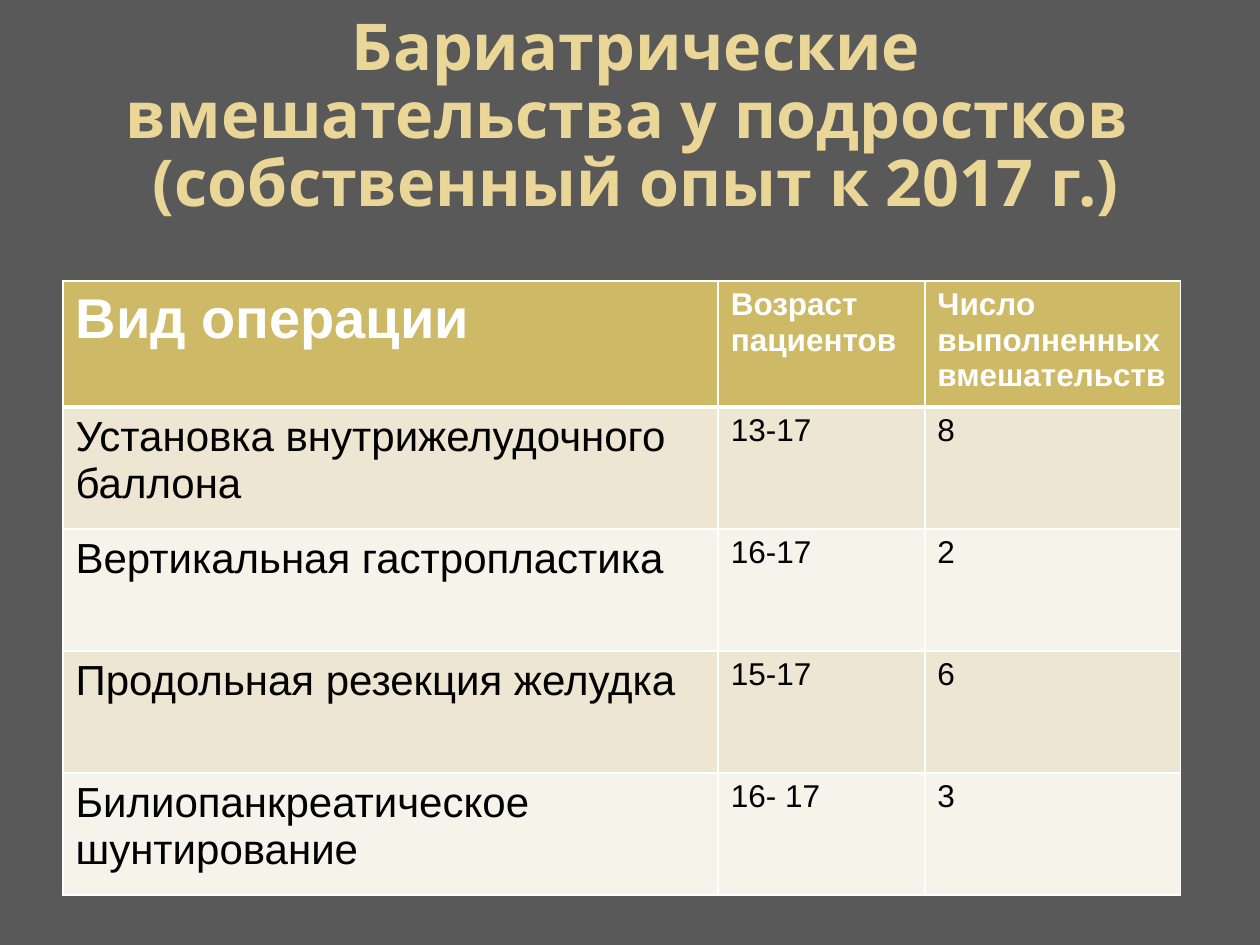
from dataclasses import dataclass

from lxml.etree import SubElement
from pptx import Presentation
from pptx.dml.color import RGBColor
from pptx.enum.text import MSO_ANCHOR as Anchor, PP_ALIGN as Align
from pptx.oxml.ns import qn
from pptx.util import Pt


@dataclass(frozen=True)
class Theme:
    background: str = "595959"
    title: str = "EAD696"
    header: str = "CEB966"
    bands: tuple = ("EDE6D3", "F6F3EA")
    light: str = "FFFFFF"
    dark: str = "000000"
    title_font: str = "Noto Sans"
    body_font: str = "Arial"
    title_size: float = 36.9
    header_size: int = 32
    name_size: int = 24
    value_size: int = 18


def write_text(frame, text, *, font, size, color, bold=False,
               align=Align.LEFT, spacing=None):
    paragraph = frame.paragraphs[0]
    paragraph.text = text
    paragraph.alignment = align
    if spacing:
        paragraph.line_spacing = spacing
    for run in paragraph.runs:
        run.font.name = font
        run.font.size = Pt(size)
        run.font.bold = bold
        run.font.color.rgb = RGBColor.from_string(color)


class SlideBuilder:
    def __init__(self, slide, theme):
        self.slide = slide
        self.theme = theme

    def background(self):
        fill = self.slide.background.fill
        fill.solid()
        fill.fore_color.rgb = RGBColor.from_string(self.theme.background)

    def title(self, text, left, top, width, height):
        box = self.slide.shapes.add_textbox(Pt(left), Pt(top), Pt(width), Pt(height))
        frame = box.text_frame
        frame.word_wrap = True
        frame.vertical_anchor = Anchor.MIDDLE
        write_text(frame, text, font=self.theme.title_font,
                   size=self.theme.title_size, color=self.theme.title,
                   bold=True, align=Align.CENTER, spacing=0.88)

    def border(self, cell, side, width):
        properties = cell._tc.get_or_add_tcPr()
        line = SubElement(properties, qn(f"a:{side}"), w=str(Pt(width)))
        fill = SubElement(line, qn("a:solidFill"))
        SubElement(fill, qn("a:srgbClr"), val=self.theme.light)

    def table(self, rows, left, top, column_widths, row_height):
        theme = self.theme
        table = self.slide.shapes.add_table(
            len(rows), len(column_widths), Pt(left), Pt(top),
            Pt(sum(column_widths)), Pt(row_height * len(rows))).table
        for column, width in zip(table.columns, column_widths):
            column.width = Pt(width)
        for i, values in enumerate(rows):
            table.rows[i].height = Pt(row_height)
            header = i == 0
            for j, value in enumerate(values):
                cell = table.cell(i, j)
                name_size = theme.header_size if header else theme.name_size
                write_text(cell.text_frame, value, font=theme.body_font,
                           size=theme.value_size if j else name_size,
                           color=theme.light if header else theme.dark,
                           bold=header)
                # Borders come before the fill in the cell properties
                for side in ("lnL", "lnR", "lnT", "lnB"):
                    heavy = (i, side) in ((0, "lnB"), (1, "lnT"))
                    self.border(cell, side, 3 if heavy else 1)
                cell.fill.solid()
                color = theme.header if header else theme.bands[(i - 1) % 2]
                cell.fill.fore_color.rgb = RGBColor.from_string(color)


def main():
    presentation = Presentation()
    presentation.slide_width, presentation.slide_height = Pt(720), Pt(540)
    slide = presentation.slides.add_slide(presentation.slide_layouts[6])
    builder = SlideBuilder(slide, Theme())
    builder.background()

    # Heading
    builder.title("Бариатрические вмешательства у подростков \v"
                  "(собственный опыт к 2017 г.)", 39.6, 22.5, 648, 90)

    # Operations by type, patient age and count
    operations = [
        ("Вид операции", "Возраст пациентов", "Число выполненных вмешательств"),
        ("Установка внутрижелудочного баллона", "13-17", "8"),
        ("Вертикальная гастропластика", "16-17", "2"),
        ("Продольная резекция желудка", "15-17", "6"),
        ("Билиопанкреатическое шунтирование", "16- 17", "3"),
    ]
    builder.table(operations, 36, 160.6, (374.4, 118.1, 146.2), 69.7)

    presentation.save("out.pptx")


if __name__ == "__main__":
    main()
